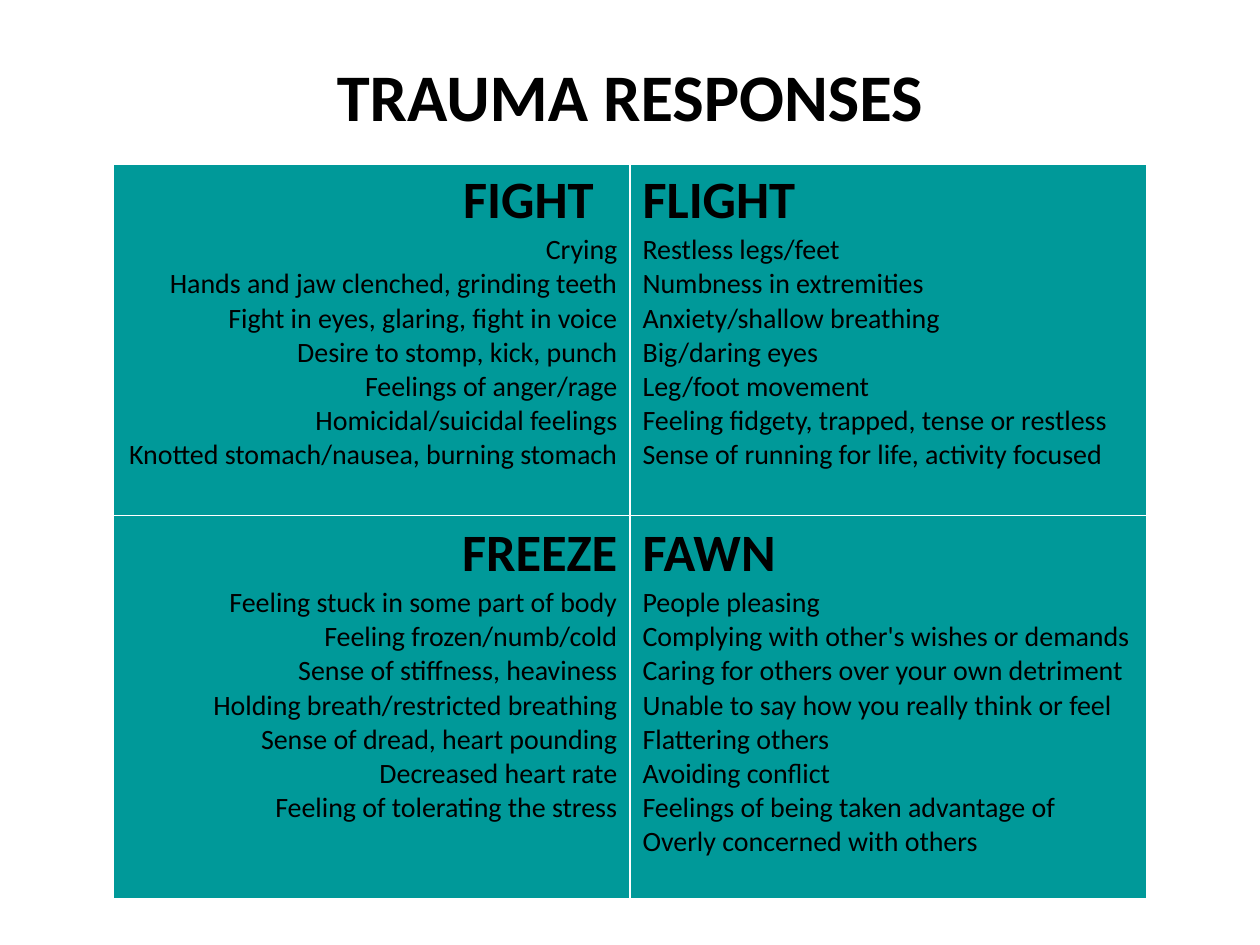
import dataclasses

import pptx
import pptx.dml.color
import pptx.enum.text
import pptx.oxml
import pptx.oxml.ns
import pptx.util

ALIGN = pptx.enum.text.PP_ALIGN


@dataclasses.dataclass(frozen=True)
class Theme:
    font: str = "Calibri"
    text: str = "000000"
    panel: str = "009999"
    paper: str = "FFFFFF"
    title_size: int = 38
    heading_size: int = 30
    item_size: int = 16
    thin: int = 1
    thick: int = 3


class Deck:
    """Holds the theme and the current slide; lengths are shares of the slide."""

    def __init__(self, prs, theme):
        self.prs = prs
        self.theme = theme
        self.slide = prs.slides.add_slide(prs.slide_layouts[6])

    def table(self, left, top, col_widths, row_heights):
        w, h = self.prs.slide_width, self.prs.slide_height
        frame = self.slide.shapes.add_table(
            len(row_heights), len(col_widths), round(left * w), round(top * h),
            round(sum(col_widths) * w), round(sum(row_heights) * h))
        table = frame.table
        for column, share in zip(table.columns, col_widths):
            column.width = round(share * w)
        for row, share in zip(table.rows, row_heights):
            row.height = round(share * h)
        return table

    def cell_style(self, cell, fill, top, bottom):
        t = self.theme
        tc_pr = cell._tc.get_or_add_tcPr()
        for side, points in (("L", t.thin), ("R", t.thin), ("T", top), ("B", bottom)):
            tc_pr.append(pptx.oxml.parse_xml(
                f'<a:ln{side} {pptx.oxml.ns.nsdecls("a")} w="{pptx.util.Pt(points)}">'
                f'<a:solidFill><a:srgbClr val="{t.paper}"/></a:solidFill></a:ln{side}>'))
        cell.fill.solid()
        cell.fill.fore_color.rgb = pptx.dml.color.RGBColor.from_string(fill)

    def paragraph(self, p, text, size, bold, align):
        p.text = text
        p.alignment = align
        for r in p.runs:
            r.font.name = self.theme.font
            r.font.size = pptx.util.Pt(size)
            r.font.bold = bold
            r.font.color.rgb = pptx.dml.color.RGBColor.from_string(self.theme.text)

    def quadrant(self, cell, heading, items, align):
        tf = cell.text_frame
        self.paragraph(tf.paragraphs[0], heading, self.theme.heading_size, True, align)
        for item in items:
            self.paragraph(tf.add_paragraph(), item, self.theme.item_size, False, align)


TITLE = "TRAUMA RESPONSES"
RESPONSES = [
    [("FIGHT  ", ["Crying", "Hands and jaw clenched, grinding teeth",
                  "Fight in eyes, glaring, fight in voice",
                  "Desire to stomp, kick, punch", "Feelings of anger/rage",
                  "Homicidal/suicidal feelings",
                  "Knotted stomach/nausea, burning stomach"]),
     ("FLIGHT", ["Restless legs/feet", "Numbness in extremities",
                 "Anxiety/shallow breathing", "Big/daring eyes", "Leg/foot movement",
                 "Feeling fidgety, trapped, tense or restless",
                 "Sense of running for life, activity focused"])],
    [("FREEZE", ["Feeling stuck in some part of body", "Feeling frozen/numb/cold",
                 "Sense of stiffness, heaviness", "Holding breath/restricted breathing",
                 "Sense of dread, heart pounding\vDecreased heart rate",
                 "Feeling of tolerating the stress"]),
     ("FAWN", ["People pleasing", "Complying with other's wishes or demands",
               "Caring for others over your own detriment",
               "Unable to say how you really think or feel", "Flattering others",
               "Avoiding conflict", "Feelings of being taken advantage of",
               "Overly concerned with others"])],
]


def main():
    prs = pptx.Presentation()
    prs.slide_width = pptx.util.Inches(10)
    prs.slide_height = pptx.util.Inches(7.5)
    theme = Theme()
    deck = Deck(prs, theme)

    # Grid: a title row above two rows of two responses
    heights = [inches / 7.5 for inches in (0.88, 2.8, 3.04)]
    table = deck.table(0.09, 0.41 / 7.5, [0.41, 0.41], heights)

    # Title across both columns
    title = table.cell(0, 0)
    title.merge(table.cell(0, 1))
    for col in range(2):
        deck.cell_style(table.cell(0, col), theme.paper, theme.thin, theme.thick)
    deck.paragraph(title.text_frame.paragraphs[0], TITLE, theme.title_size,
                   True, ALIGN.CENTER)

    # Responses, aligned towards the centre line
    for row, pair in enumerate(RESPONSES, start=1):
        top = theme.thick if row == 1 else theme.thin
        for col, (heading, items) in enumerate(pair):
            cell = table.cell(row, col)
            deck.cell_style(cell, theme.panel, top, theme.thin)
            deck.quadrant(cell, heading, items, (ALIGN.RIGHT, ALIGN.LEFT)[col])

    prs.save("out.pptx")


if __name__ == "__main__":
    main()
